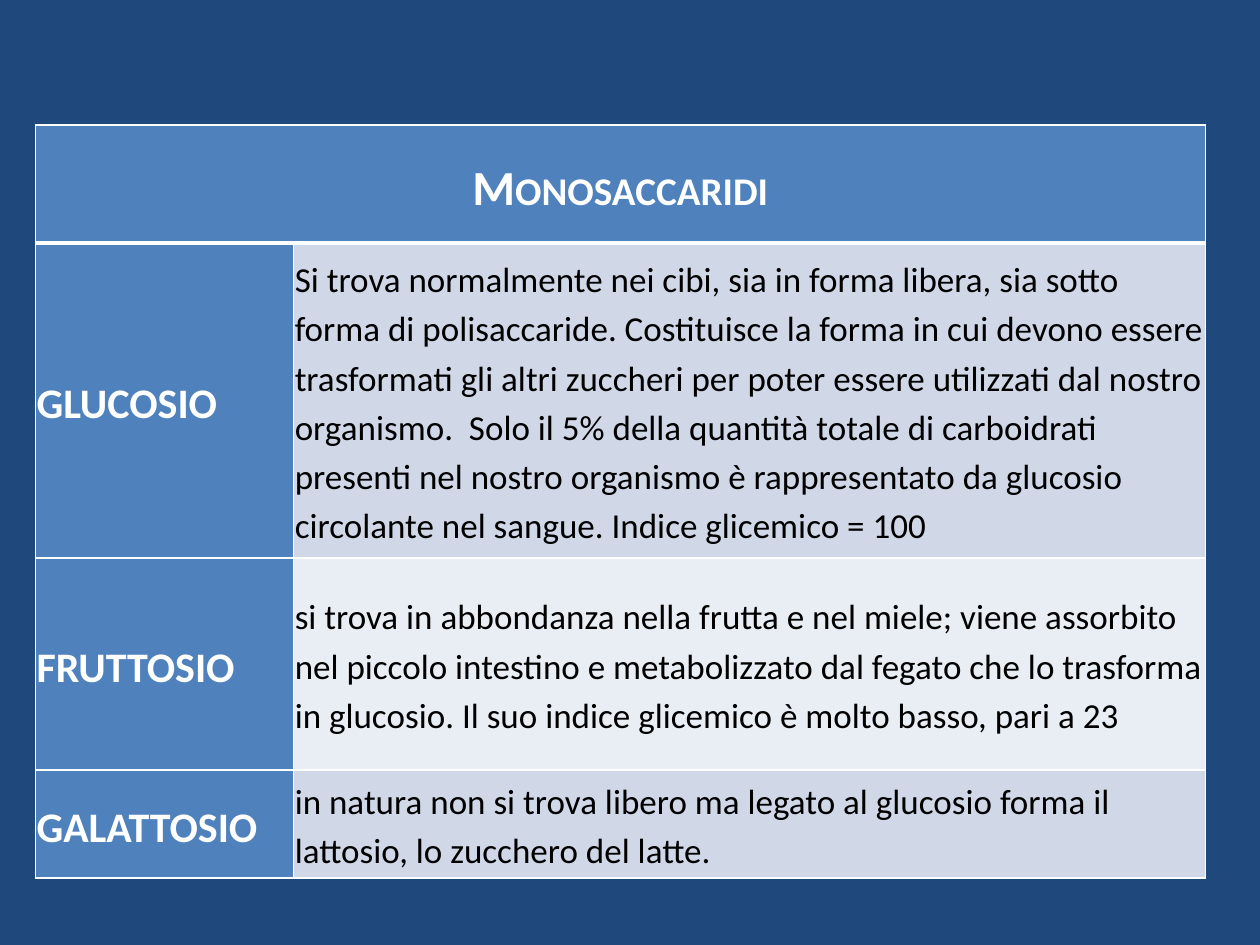
from lxml.etree import SubElement
from pptx import Presentation
from pptx.dml.color import RGBColor
from pptx.enum.text import MSO_ANCHOR as Anchor, PP_ALIGN as Align
from pptx.oxml.ns import qn
from pptx.util import Inches, Pt

TITLE = "Monosaccaridi"
SUGARS = [
    ("GLUCOSIO",
     "Si trova normalmente nei cibi, sia in forma libera, sia sotto forma di "
     "polisaccaride. Costituisce la forma in cui devono essere trasformati gli "
     "altri zuccheri per poter essere utilizzati dal nostro organismo.  Solo il "
     "5% della quantità totale di carboidrati presenti nel nostro organismo è "
     "rappresentato da glucosio circolante nel sangue. Indice glicemico = 100"),
    ("FRUTTOSIO",
     "si trova in abbondanza nella frutta e nel miele; viene assorbito nel "
     "piccolo intestino e metabolizzato dal fegato che lo trasforma in glucosio. "
     "Il suo indice glicemico è molto basso, pari a 23"),
    ("GALATTOSIO",
     "in natura non si trova libero ma legato al glucosio forma il lattosio, "
     "lo zucchero del latte."),
]
LEFT, TOP = 0.28, 0.99
COLUMN_WIDTHS = [2.05, 7.24]
ROW_HEIGHTS = [0.94, 2.5, 1.68, 0.86]
NAVY, BLUE, WHITE, BLACK = "1F497D", "4F81BD", "FFFFFF", "000000"
BANDS = ["D0D8E8", "E9EDF4"]
THIN, THICK = 1, 3


def paint(fill, color):
    fill.solid()
    fill.fore_color.rgb = RGBColor.from_string(color)


def add_borders(cell, top, bottom):
    """Draw white cell edges; widths are in points."""
    properties = cell._tc.get_or_add_tcPr()
    for side, width in (("L", THIN), ("R", THIN), ("T", top), ("B", bottom)):
        line = SubElement(properties, qn(f"a:ln{side}"), w=str(Pt(width)))
        solid = SubElement(line, qn("a:solidFill"))
        SubElement(solid, qn("a:srgbClr"), val=WHITE)


def style_cell(cell, fill, top=THIN, bottom=THIN):
    add_borders(cell, top, bottom)
    paint(cell.fill, fill)
    cell.vertical_anchor = Anchor.MIDDLE
    cell.margin_left = cell.margin_right = Inches(0.01)
    cell.margin_top = cell.margin_bottom = Inches(0.01)


def write(cell, text, size, color, bold, space_after=10):
    paragraph = cell.text_frame.paragraphs[0]
    paragraph.line_spacing = 1.15
    paragraph.space_after = Pt(space_after)
    run = paragraph.add_run()
    run.text = text
    run.font.name = "Calibri"
    run.font.size = Pt(size)
    run.font.bold = bold
    paint(run.font.fill, color)
    return paragraph, run


presentation = Presentation()
presentation.slide_width, presentation.slide_height = Inches(10), Inches(7.5)
slide = presentation.slides.add_slide(presentation.slide_layouts[6])
paint(slide.background.fill, NAVY)

table = slide.shapes.add_table(
    len(ROW_HEIGHTS), len(COLUMN_WIDTHS), Inches(LEFT), Inches(TOP),
    Inches(sum(COLUMN_WIDTHS)), Inches(sum(ROW_HEIGHTS))).table
for column, width in zip(table.columns, COLUMN_WIDTHS):
    column.width = Inches(width)
for row, height in zip(table.rows, ROW_HEIGHTS):
    row.height = Inches(height)

header = table.cell(0, 0)
header.merge(table.cell(0, 1))
for cell in table.rows[0].cells:
    style_cell(cell, BLUE, bottom=THICK)
paragraph, run = write(header, TITLE, 28, WHITE, True, space_after=0)
paragraph.alignment = Align.CENTER
run.font._element.set("cap", "small")

for index, (name, description) in enumerate(SUGARS):
    name_cell, description_cell = table.rows[index + 1].cells
    top = THICK if index == 0 else THIN
    style_cell(name_cell, BLUE, top)
    write(name_cell, name, 24, WHITE, True)
    style_cell(description_cell, BANDS[index % 2], top)
    write(description_cell, description, 20, BLACK, False)

presentation.save("out.pptx")
